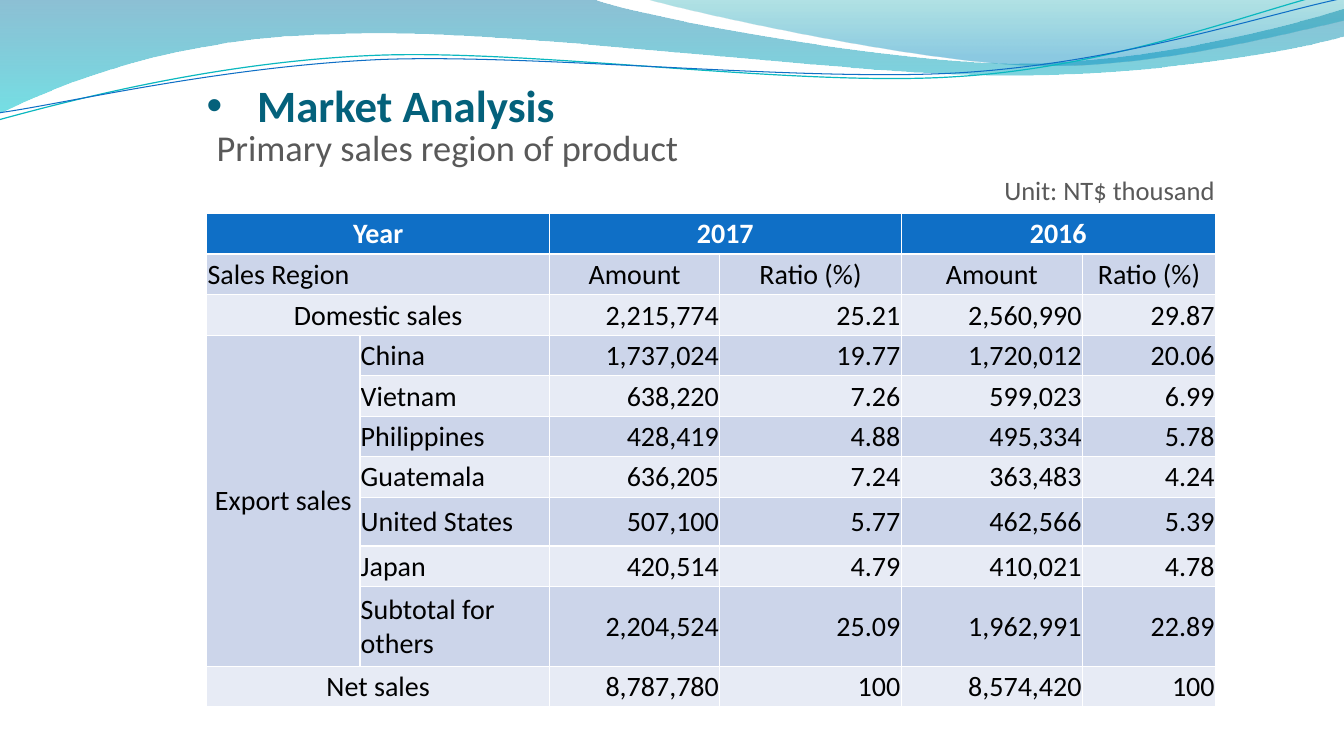
from lxml.etree import SubElement
from pptx import Presentation
from pptx.dml.color import RGBColor
from pptx.enum.text import MSO_ANCHOR, PP_ALIGN
from pptx.oxml.ns import qn
from pptx.util import Cm, Pt

FONT = "Calibri"
LEFT, WIDTH = 5.21, 25.42

# Outlines in cm: one point is a straight line, three points are a curve
BACK_WAVE = [
    [(0, 0)],
    [(14.91, -0.03)],
    [(16.1, 0.43), (22.48, 1.6), (25.68, 1.6)],
    [(28.91, 1.6), (32.46, 0.66), (33.86, 0.23)],
    [(33.91, 0.91)],
    [(33.3, 1.12), (29.46, 1.93), (25.25, 1.9)],
    [(21.06, 1.9), (12.93, 0.71), (8.71, 0.86)],
    [(4.37, 0.91), (1.55, 2.11), (-0.03, 2.87)],
]
FRONT_WAVE = [
    [(16.23, -0.03)],
    [(17.25, 0.28), (23.09, 1.57), (26.04, 1.65)],
    [(28.98, 1.75), (32.56, 0.81), (33.86, 0.53)],
    [(33.86, 0)],
]
TEAL_STRAND = [
    [(-0.03, 3.02)],
    [(1.63, 2.57), (5.36, 1.57), (9.37, 1.4)],
    [(13.39, 1.22), (20.07, 2.21), (24.13, 1.93)],
    [(28.19, 1.68), (31.8, 0.2), (33.81, -0.25)],
]
BLUE_STRAND = [
    [(0, 2.84)],
    [(1.6, 2.62), (5.54, 1.68), (9.6, 1.5)],
    [(13.64, 1.35), (20.22, 2.08), (24.26, 1.83)],
    [(28.32, 1.57), (31.88, 0.36), (33.88, -0.05)],
]

COLUMNS = [3.86, 4.78, 4.29, 4.57, 4.57, 3.35]
ROW_HEIGHTS = [1.02, 1.03] + [1.02] * 5 + [1.23, 1.02, 2.01, 1.02]
SALES = [
    ["Year", "", "2017", "", "2016", ""],
    ["Sales Region", "", "Amount", "Ratio (%)", "Amount", "Ratio (%)"],
    ["Domestic sales", "", "2,215,774", "25.21", "2,560,990", "29.87"],
    ["Export sales", "China", "1,737,024", "19.77", "1,720,012", "20.06"],
    ["", "Vietnam", "638,220", "7.26", "599,023", "6.99"],
    ["", "Philippines", "428,419", "4.88", "495,334", "5.78"],
    ["", "Guatemala", "636,205", "7.24", "363,483", "4.24"],
    ["", "United States", "507,100", "5.77", "462,566", "5.39"],
    ["", "Japan", "420,514", "4.79", "410,021", "4.78"],
    ["", "Subtotal for others", "2,204,524", "25.09", "1,962,991", "22.89"],
    ["Net sales", "", "8,787,780", "100", "8,574,420", "100"],
]
# Merged areas: first row, first column, last row, last column
MERGES = [(0, 0, 0, 1), (0, 2, 0, 3), (0, 4, 0, 5), (1, 0, 1, 1),
          (2, 0, 2, 1), (3, 0, 9, 0), (10, 0, 10, 1)]


def color(code):
    return RGBColor.from_string(code)


def add_span(para, text, size, code, bold=False):
    span = para.add_run()
    span.text = text
    span.font.name = FONT
    span.font.size = Pt(size)
    span.font.bold = bold
    span.font.color.rgb = color(code)


def set_margins(frame, left, top, right, bottom):
    frame.margin_left, frame.margin_top = Cm(left), Cm(top)
    frame.margin_right, frame.margin_bottom = Cm(right), Cm(bottom)


def add_outline(page, outline, left, top, close):
    points = [(Cm(left + x), Cm(top + y)) for segment in outline for x, y in segment]
    builder = page.shapes.build_freeform(*points[0])
    builder.add_line_segments(points[1:], close=close)
    shape = builder.convert_to_shape()
    shape.shadow.inherit = False
    # Join each three line ends of a curve into one cubic segment
    lines = iter(list(shape.element.iter(qn("a:lnTo"))))
    for segment in outline[1:]:
        ends = [next(lines) for point in segment]
        if len(ends) == 3:
            curve = SubElement(ends[0].getparent(), qn("a:cubicBezTo"))
            ends[0].addprevious(curve)
            for end in ends:
                curve.append(end[0])
                end.getparent().remove(end)
    return shape


def add_waves(page, left, top):
    # Translucent gradient bands: position, colour, opacity in percent
    for outline, stops in [
        (BACK_WAVE, [(0, "0074A1", 45), (1, "00C6CF", 55)]),
        (FRONT_WAVE, [(0, "00A1A9", 30), (0.8, "008BBF", 45)]),
    ]:
        band = add_outline(page, outline, left, top, True)
        band.line.fill.background()
        band.fill.gradient()
        band.fill.gradient_angle = 270
        for stop, (position, code, opacity) in zip(band.fill.gradient_stops, stops):
            stop.position = position
            stop.color.rgb = color(code)
        for tone, (position, code, opacity) in zip(band.element.iter(qn("a:srgbClr")), stops):
            SubElement(tone, qn("a:alpha"), val=str(opacity * 1000))
    # Thin strands
    for outline, code, weight in [(TEAL_STRAND, "0AB8BF", 0.85), (BLUE_STRAND, "0F6FC6", 0.75)]:
        strand = add_outline(page, outline, left, top, False)
        strand.fill.background()
        strand.line.color.rgb = color(code)
        strand.line.width = Pt(weight)


def add_title(page, left, top, width, height):
    title = page.shapes.title
    title.left, title.top, title.width, title.height = map(Cm, (left, top, width, height))
    title.element.getparent().append(title.element)
    frame = title.text_frame
    frame.vertical_anchor = MSO_ANCHOR.MIDDLE
    set_margins(frame, 0, 0.13, 0, 0)
    para = frame.paragraphs[0]
    para.alignment = PP_ALIGN.LEFT
    add_span(para, "Market Analysis", 32, "04617B", True)
    # Bullet with a hanging indent
    settings = para._p.get_or_add_pPr()
    settings.set("marL", str(Cm(1.27)))
    settings.set("indent", str(Cm(-1.27)))
    SubElement(settings, qn("a:buFont"), typeface="Arial")
    SubElement(settings, qn("a:buChar"), char="•")


def add_subtitle(page, left, top, width, height):
    box = page.shapes.add_textbox(Cm(left), Cm(top), Cm(width), Cm(height))
    frame = box.text_frame
    frame.word_wrap = True
    frame.vertical_anchor = MSO_ANCHOR.MIDDLE
    for index, (text, size, alignment) in enumerate([
        ("Primary sales region of product", 26, PP_ALIGN.LEFT),
        ("Unit: NT$ thousand", 19, PP_ALIGN.RIGHT),
    ]):
        para = frame.add_paragraph() if index else frame.paragraphs[0]
        para.alignment = alignment
        para.space_before = Pt(3.5)
        add_span(para, text, size, "595959")


def add_borders(cell, row):
    """White borders, thicker between the two heading rows."""
    thick = {(0, "B"), (1, "T")}
    for side in "LRTB":
        weight = 1.5 if (row, side) in thick else 1
        border = SubElement(cell._tc.get_or_add_tcPr(), qn("a:ln" + side), w=str(Pt(weight)))
        SubElement(SubElement(border, qn("a:solidFill")), qn("a:srgbClr"), val="FFFFFF")


def format_cell(cell, row, column, text):
    cell.vertical_anchor = MSO_ANCHOR.MIDDLE
    set_margins(cell, 0.02, 0.02, 0.02, 0)
    if row < 2:
        add_borders(cell, row)
    cell.fill.solid()
    cell.fill.fore_color.rgb = color("0F6FC6" if row == 0 else "CCD5EA" if row % 2 else "E7EBF5")
    if not text:
        return
    para = cell.text_frame.paragraphs[0]
    if text == "Sales Region" or (column == 1 and row > 0):
        para.alignment = PP_ALIGN.LEFT
    elif column > 1 and row > 1:
        para.alignment = PP_ALIGN.RIGHT
    else:
        para.alignment = PP_ALIGN.CENTER
    add_span(para, text, 20, "000000" if row else "FFFFFF", row == 0)


def add_sales_table(page, left, top):
    table = page.shapes.add_table(len(SALES), len(COLUMNS), Cm(left), Cm(top),
                                  Cm(sum(COLUMNS)), Cm(sum(ROW_HEIGHTS))).table
    for column, width in zip(table.columns, COLUMNS):
        column.width = Cm(width)
    for row, height in zip(table.rows, ROW_HEIGHTS):
        row.height = Cm(height)
    for row, texts in enumerate(SALES):
        for column, text in enumerate(texts):
            format_cell(table.cell(row, column), row, column, text)
    for first_row, first_column, last_row, last_column in MERGES:
        table.cell(first_row, first_column).merge(table.cell(last_row, last_column))


def main():
    deck = Presentation()
    deck.slide_width, deck.slide_height = Cm(33.87), Cm(19.05)
    page = deck.slides.add_slide(deck.slide_layouts[5])
    add_waves(page, 0, 0)
    add_title(page, LEFT, 1.46, WIDTH, 2.24)
    add_subtitle(page, LEFT, 2.97, WIDTH + 0.23, 2.41)
    add_sales_table(page, LEFT, 5.38)
    deck.save("out.pptx")


if __name__ == "__main__":
    main()
